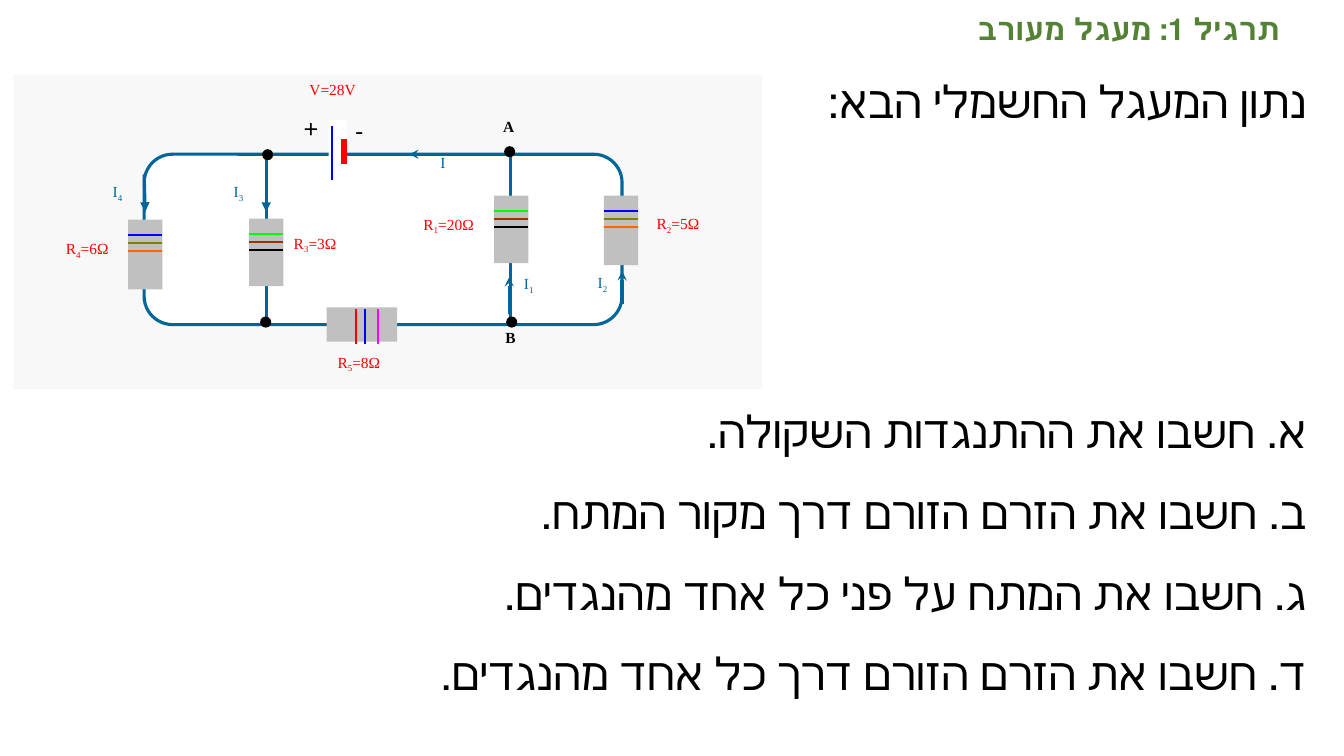
from pptx import Presentation
from pptx.dml.color import RGBColor
from pptx.enum.shapes import MSO_CONNECTOR, MSO_SHAPE
from pptx.enum.text import MSO_ANCHOR, PP_ALIGN
from pptx.oxml.ns import qn
from pptx.util import Inches, Pt
from lxml.etree import SubElement

WIRE = "006699"
RED = "FF0000"
BLUE = "0000FF"
BLACK = "000000"
GREY = "C0C0C0"
WHITE = "FFFFFF"
LABEL_FONT = "Times New Roman"

TITLE = "תרגיל 1: מעגל מעורב"
INTRO = "נתון המעגל החשמלי הבא:"
QUESTIONS = [
    "א. חשבו את ההתנגדות השקולה.",
    "ב. חשבו את הזרם הזורם דרך מקור המתח.",
    "ג. חשבו את המתח על פני כל אחד מהנגדים.",
    "ד. חשבו את הזרם הזורם דרך כל אחד מהנגדים.",
]

# left, top, height, colours of the bands from top to bottom
PARALLEL_BANDS = ["00FF00", "993300", BLACK]
OUTER_BANDS = [BLUE, "808000", "FF6600"]
UPRIGHT_RESISTORS = [
    (4.9, 1.94, 0.67, PARALLEL_BANDS),
    (5.99, 1.94, 0.69, OUTER_BANDS),
    (2.47, 2.17, 0.67, PARALLEL_BANDS),
    (1.27, 2.18, 0.69, OUTER_BANDS),
]

# start, end, arrowhead
CURRENT_ARROWS = [
    ((4.77, 1.53), (4.06, 1.53), "stealth"),
    ((5.05, 3.12), (5.05, 2.75), "stealth"),
    ((6.17, 3.02), (6.17, 2.69), "stealth"),
    ((2.64, 1.73), (2.64, 2.1), "triangle"),
    ((1.43, 1.73), (1.44, 2.1), "triangle"),
]

# left and top of each junction dot
JUNCTIONS = [(5, 1.45), (5.02, 3.14), (2.6, 1.48), (2.58, 3.14)]

# left, top, width, height, symbol, subscript, value
CURRENT_LABELS = [
    (4.06, 1.47, 0.67, 0.48, "I", "", ""),
    (5.01, 2.67, 0.47, 0.48, "I", "1", ""),
    (5.74, 2.66, 0.47, 0.44, "I", "2", ""),
    (2.13, 1.76, 0.47, 0.48, "I", "3", ""),
    (0.93, 1.76, 0.47, 0.48, "I", "4", ""),
]
VALUE_LABELS = [
    (3.9, 2.08, 1.1, 0.48, "R", "1", "=20Ω"),
    (6.16, 2.08, 1.13, 0.43, "R", "2", "=5Ω"),
    (2.67, 2.27, 0.91, 0.64, "R", "3", "=3Ω"),
    (0.39, 2.32, 0.95, 0.43, "R", "4", "=6Ω"),
    (3.06, 3.45, 1, 0.43, "R", "5", "=8Ω"),
    (2.8, 0.75, 1, 0.43, "V=28V", "", ""),
]


def rgb(value):
    return RGBColor.from_string(value)


def add_text_box(shapes, left, top, width, height, anchor=MSO_ANCHOR.TOP):
    frame = shapes.add_textbox(
        Inches(left), Inches(top), Inches(width), Inches(height)
    ).text_frame
    frame.word_wrap = True
    frame.vertical_anchor = anchor
    return frame


def write(paragraph, *texts, font, size, color, bold=False, align=PP_ALIGN.CENTER,
          rtl=False, line_spacing=1.0, before=0, after=0):
    """Fill a paragraph with runs; the second run is a subscript."""
    paragraph.alignment = align
    paragraph.line_spacing = line_spacing
    paragraph.space_before = Pt(before)
    paragraph.space_after = Pt(after)
    if rtl:
        paragraph._p.get_or_add_pPr().set("rtl", "1")
    for index, text in enumerate(texts):
        if not text:
            continue
        run = paragraph.add_run()
        run.text = text
        run.font.name = font
        run.font.size = Pt(size)
        run.font.bold = bold
        run.font.color.rgb = rgb(color)
        if index == 1:
            run._r.get_or_add_rPr().set("baseline", "-25000")


def add_label(shapes, left, top, width, height, *texts, color, font=LABEL_FONT,
              size=11, **options):
    frame = add_text_box(shapes, left, top, width, height)
    write(frame.paragraphs[0], *texts, font=font, size=size, color=color,
          after=10, **options)


def add_box(shapes, kind, left, top, width, height, fill, line=None):
    shape = shapes.add_shape(
        kind, Inches(left), Inches(top), Inches(width), Inches(height))
    shape.shadow.inherit = False
    shape.fill.solid()
    shape.fill.fore_color.rgb = rgb(fill)
    if line:
        shape.line.color.rgb = rgb(line)
        shape.line.width = Pt(2.25)
    else:
        shape.line.fill.background()
    return shape


def add_line(shapes, start, end, color, width, arrowhead=None):
    connector = shapes.add_connector(
        MSO_CONNECTOR.STRAIGHT, *(Inches(value) for value in (*start, *end)))
    connector.line.color.rgb = rgb(color)
    connector.line.width = Pt(width)
    if arrowhead:
        SubElement(connector.line._get_or_add_ln(), qn("a:tailEnd"), type=arrowhead)
    SubElement(connector._element.spPr, qn("a:effectLst"))


def add_upright_resistor(shapes, left, top, height, bands):
    width = 0.34
    add_box(shapes, MSO_SHAPE.RECTANGLE, left, top, width, height, GREY)
    for index, color in enumerate(bands):
        y = top + 0.15 + 0.08 * index
        add_line(shapes, (left, y), (left + width, y), color, 1.5)


def add_series_resistor(shapes):
    add_box(shapes, MSO_SHAPE.RECTANGLE, 3.24, 3.05, 0.7, 0.34, GREY)
    for x, color in [(3.53, RED), (3.62, BLUE), (3.75, "FF00FF")]:
        add_line(shapes, (x, 3.07), (x, 3.41), color, 1.5)


def add_battery(shapes):
    add_box(shapes, MSO_SHAPE.RECTANGLE, 3.26, 1.19, 0.18, 0.54, WHITE)
    add_line(shapes, (3.29, 1.25), (3.29, 1.79), BLUE, 1.5)
    add_line(shapes, (3.41, 1.38), (3.41, 1.63), RED, 4.5)
    for left, top, sign in [(3.3, 1.09, "-"), (2.82, 1.04, "+")]:
        add_label(shapes, left, top, 0.53, 0.58, sign, color=BLACK,
                  font="Arial", size=18, rtl=True)


def add_circuit(slide):
    shapes = slide.shapes.add_group_shape().shapes
    add_box(shapes, MSO_SHAPE.RECTANGLE, 0.13, 0.74, 7.43, 3.12, "F8F8F8")
    loop = add_box(shapes, MSO_SHAPE.ROUNDED_RECTANGLE, 1.43, 1.53, 4.74, 1.69,
                   WHITE, line=WIRE)
    loop.adjustments[0] = 0.167
    for x in (5.06, 2.64):
        add_line(shapes, (x, 1.54), (x, 3.22), WIRE, 2.25)

    for resistor in UPRIGHT_RESISTORS:
        add_upright_resistor(shapes, *resistor)
    add_series_resistor(shapes)
    add_battery(shapes)
    for start, end, arrowhead in CURRENT_ARROWS:
        add_line(shapes, start, end, WIRE, 2.25, arrowhead)
    for left, top in JUNCTIONS:
        add_box(shapes, MSO_SHAPE.OVAL, left, top, 0.11, 0.11, BLACK)

    for label in CURRENT_LABELS:
        add_label(shapes, *label, color=WIRE)
    for label in VALUE_LABELS:
        add_label(shapes, *label, color=RED)
    for left, top, name in [(4.81, 1.11, "A"), (4.83, 3.21, "B")]:
        add_label(shapes, left, top, 0.47, 0.48, name, color=BLACK, bold=True)


def add_exercise_text(slide):
    right_to_left = {"align": PP_ALIGN.RIGHT, "rtl": True}
    title = add_text_box(slide.shapes, 1.59, 0.11, 11.2, 0.39, MSO_ANCHOR.MIDDLE)
    write(title.paragraphs[0], TITLE, font="Calibri", size=21.6, color="548235",
          bold=True, line_spacing=0.9, **right_to_left)

    body = add_text_box(slide.shapes, 4.05, 0.74, 9.01, 6.49)
    body_style = {"font": "Arial", "size": 32, "color": BLACK, **right_to_left}
    write(body.paragraphs[0], INTRO, line_spacing=0.9, **body_style)
    for index, question in enumerate(QUESTIONS):
        write(body.add_paragraph(), question, line_spacing=1.5,
              before=0 if index else 178, **body_style)


def main():
    presentation = Presentation()
    presentation.slide_width = Inches(13.33)
    presentation.slide_height = Inches(7.5)
    slide = presentation.slides.add_slide(presentation.slide_layouts[6])
    add_exercise_text(slide)
    add_circuit(slide)
    presentation.save("out.pptx")


if __name__ == "__main__":
    main()
